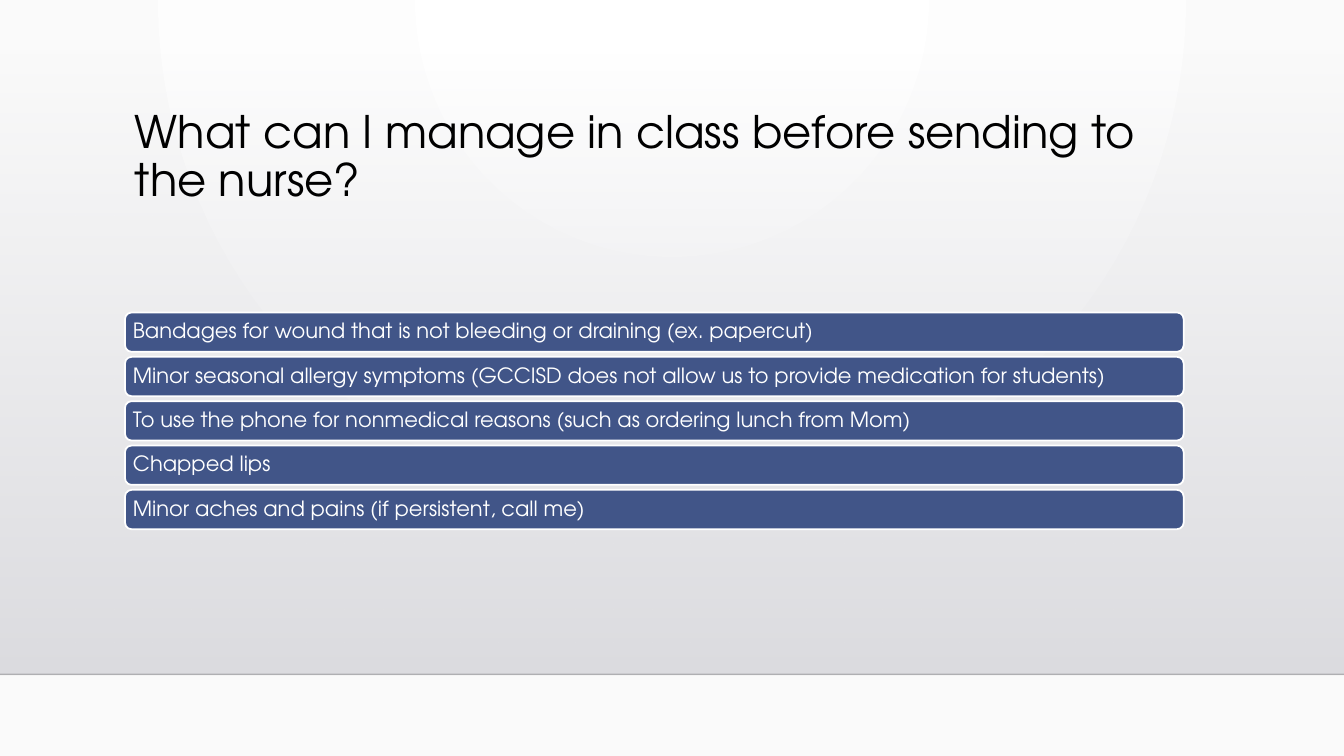
from lxml.etree import SubElement
from pptx import Presentation
from pptx.dml.color import RGBColor as RGB
from pptx.enum.shapes import MSO_CONNECTOR as LINE, MSO_SHAPE as SHAPE
from pptx.enum.text import MSO_ANCHOR as ANCHOR, PP_ALIGN as ALIGN
from pptx.oxml import parse_xml
from pptx.oxml.ns import nsdecls, qn
from pptx.util import Inches, Pt

FONT = "TeX Gyre Adventor"
BLACK = RGB(0, 0, 0)
INK = RGB(0, 0, 1)
WHITE = RGB(255, 255, 255)
BLUE = RGB(0x41, 0x55, 0x88)
LEFT, WIDTH = Inches(1.24), Inches(10.5)
TIPS = [
    "Bandages for wound that is not bleeding or draining (ex. papercut)",
    "Minor seasonal allergy symptoms (GCCISD does not allow us to provide medication for students)",
    "To use the phone for nonmedical reasons (such as ordering lunch from Mom)",
    "Chapped lips",
    "Minor aches and pains (if persistent, call me)",
]


def blend(fill, props, stops, shade):
    fill.gradient()
    old = props.find(qn("a:gradFill"))
    marks = "".join(
        f'<a:gs pos="{pos}"><a:srgbClr val="{color}"><a:alpha val="{alpha}"/></a:srgbClr></a:gs>'
        for pos, color, alpha in stops
    )
    new = parse_xml(
        f'<a:gradFill {nsdecls("a")} rotWithShape="1"><a:gsLst>{marks}</a:gsLst>{shade}</a:gradFill>'
    )
    props.replace(old, new)


def write(frame, text, size, color):
    frame.word_wrap = True
    para = frame.paragraphs[0]
    para.text = text
    para.alignment = ALIGN.LEFT
    para.line_spacing = 0.9
    para.font.name = FONT
    para.font.size = Pt(size)
    para.font.color.rgb = color


deck = Presentation()
deck.slide_width, deck.slide_height = Inches(13.33), Inches(7.5)
slide = deck.slides.add_slide(deck.slide_layouts[6])
shapes = slide.shapes

back = slide.background.fill
back.solid()
blend(
    back,
    slide.element.cSld.bg.bgPr,
    [(0, "FFFFFF", 100000), (100000, "FAFAFA", 100000)],
    '<a:path path="circle"><a:fillToRect l="43000" t="0" r="43000" b="100000"/></a:path>',
)

wall = shapes.add_shape(SHAPE.RECTANGLE, 0, Inches(0.51), deck.slide_width, Inches(6.18))
wall.shadow.inherit = False
wall.line.fill.background()
blend(
    wall.fill,
    wall.element.spPr,
    [(0, "DCDCE0", 0), (100000, "DEDEE2", 100000)],
    '<a:lin ang="5400000" scaled="0"/>',
)

floor = shapes.add_connector(LINE.STRAIGHT, 0, Inches(6.69), deck.slide_width, Inches(6.69))
floor.line.width = Pt(1)
floor.line.color.rgb = INK
tint = floor.element.spPr.find(".//" + qn("a:srgbClr"))
SubElement(tint, qn("a:alpha")).set("val", "20000")
SubElement(floor.element.spPr, qn("a:effectLst"))

title = shapes.add_textbox(LEFT, Inches(1.04), WIDTH, Inches(1.15))
write(title.text_frame, "What can I manage in class before sending to the nurse?", 32, BLACK)

for row, tip in enumerate(TIPS):
    bar = shapes.add_shape(SHAPE.ROUNDED_RECTANGLE, LEFT, Inches(3.1 + 0.44 * row), WIDTH, Inches(0.39))
    bar.shadow.inherit = False
    bar.fill.solid()
    bar.fill.fore_color.rgb = BLUE
    bar.line.color.rgb = WHITE
    bar.line.width = Pt(1.25)
    frame = bar.text_frame
    frame.vertical_anchor = ANCHOR.MIDDLE
    frame.margin_left = frame.margin_right = Inches(0.06)
    frame.margin_top = frame.margin_bottom = Inches(0.06)
    write(frame, tip, 15, WHITE)

deck.save("out.pptx")
